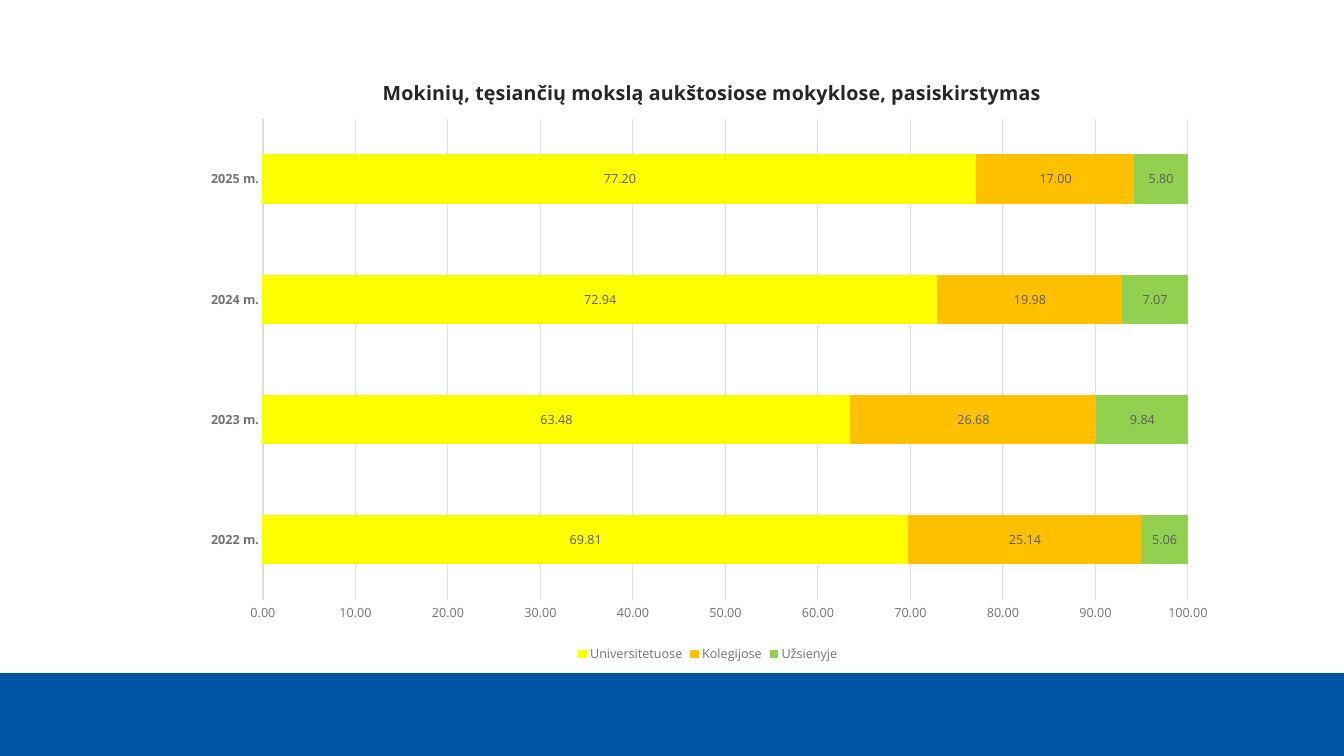
from dataclasses import dataclass

from lxml.etree import SubElement
from pptx import Presentation
from pptx.chart.chart import Chart
from pptx.chart.data import CategoryChartData
from pptx.dml.color import RGBColor
from pptx.enum.chart import (XL_CHART_TYPE, XL_LABEL_POSITION,
                             XL_LEGEND_POSITION, XL_TICK_MARK)
from pptx.enum.shapes import MSO_SHAPE
from pptx.oxml.ns import qn
from pptx.util import Emu, Pt

WIDE, HIGH = 1344, 756
SCALE = 12192000 / WIDE
FACE = "Open Sans"
HUES = {
    "band": "0054A5", "title": "262626", "axis": "727272",
    "label": "5C5C5C", "grid": "DEDEDE",
    "yellow": "FFFF00", "orange": "FFC000", "green": "92D050",
}
TITLE = "Mokinių, tęsiančių mokslą aukštosiose mokyklose, pasiskirstymas"
YEARS = ["2022 m.", "2023 m.", "2024 m.", "2025 m."]


@dataclass
class Box:
    """A rectangle in px."""
    left: int
    top: int
    width: int
    height: int

    def emu(self) -> tuple:
        """Return the four lengths in EMU."""
        return tuple(px(v) for v in (self.left, self.top, self.width, self.height))


@dataclass
class Group:
    """One kind of school and its yearly shares."""
    name: str
    hue: str
    shares: list


BAND = Box(0, 673, WIDE, 83)
FRAME = Box(187, 50, 1042, 617)
PLOT = Box(263, 119, 925, 481)
HEAD = Box(379, 74, 658, 27)
GROUPS = [
    Group("Universitetuose", "yellow", [69.81, 63.48, 72.94, 77.2]),
    Group("Kolegijose", "orange", [25.14, 26.68, 19.98, 17]),
    Group("Užsienyje", "green", [5.06, 9.84, 7.07, 5.8]),
]


def px(size: int) -> Emu:
    """Turn px into EMU."""
    return Emu(round(size * SCALE))


def rgb(hue: str) -> RGBColor:
    """Look up a named colour."""
    return RGBColor.from_string(HUES[hue])


def style(font, size: int, hue: str, bold: bool = False) -> None:
    """Set face, size, colour and weight."""
    font.name, font.size, font.bold = FACE, Pt(size), bold
    font.color.rgb = rgb(hue)


def stroke(line, hue: str) -> None:
    """Draw a thin line in one colour."""
    line.color.rgb = rgb(hue)
    line.width = Pt(0.75)


def place(owner, spot: int, box: Box, inner: bool) -> None:
    """Pin a chart part to a box, as shares of the chart frame."""
    for old in owner.findall(qn("c:layout")):
        owner.remove(old)
    layout = SubElement(owner, qn("c:layout"))
    owner.insert(spot, layout)
    manual = SubElement(layout, qn("c:manualLayout"))
    rules = {"xMode": "edge", "yMode": "edge",
             "x": (box.left - FRAME.left) / FRAME.width,
             "y": (box.top - FRAME.top) / FRAME.height}
    if inner:
        rules = {"layoutTarget": "inner", **rules,
                 "w": box.width / FRAME.width, "h": box.height / FRAME.height}
    for tag, val in rules.items():
        SubElement(manual, qn(f"c:{tag}")).set("val", str(val))


def add_band(slide) -> None:
    """Draw the blue band at the foot."""
    band = slide.shapes.add_shape(MSO_SHAPE.RECTANGLE, *BAND.emu())
    band.shadow.inherit = False
    band.fill.solid()
    band.fill.fore_color.rgb = rgb("band")
    band.line.fill.background()


def set_title(chart: Chart) -> None:
    """Write and place the chart title."""
    chart.has_title = True
    title = chart.chart_title
    title.include_in_layout = False
    line = title.text_frame.paragraphs[0]
    line.text = TITLE
    style(line.font, 14, "title", True)
    place(chart.element.find(f".//{qn('c:title')}"), 1, HEAD, False)


def set_axes(chart: Chart) -> None:
    """Format both axes and the grid."""
    years, shares = chart.category_axis, chart.value_axis
    for axis in (years, shares):
        axis.major_tick_mark = axis.minor_tick_mark = XL_TICK_MARK.NONE
        style(axis.tick_labels.font, 9, "axis", axis is years)
    stroke(years.format.line, "grid")
    shares.format.line.fill.background()
    shares.minimum_scale, shares.maximum_scale = 0, 100
    shares.major_unit = 10
    shares.has_major_gridlines = True
    stroke(shares.major_gridlines.format.line, "grid")
    shares.tick_labels.number_format = "0.00"
    shares.tick_labels.number_format_is_linked = False


def set_bars(chart: Chart) -> None:
    """Colour and label each group of bars."""
    plot = chart.plots[0]
    plot.gap_width, plot.overlap = 150, 100
    plot.vary_by_categories = False
    for group, bars in zip(GROUPS, plot.series):
        bars.format.fill.solid()
        bars.format.fill.fore_color.rgb = rgb(group.hue)
        stroke(bars.format.line, group.hue)
        labels = bars.data_labels
        labels.show_value = True
        labels.number_format = "0.00"
        labels.number_format_is_linked = False
        labels.position = XL_LABEL_POSITION.CENTER
        style(labels.font, 9, "label")


def add_bars(slide) -> None:
    """Add the stacked bar chart."""
    data = CategoryChartData(number_format="0.00")
    data.categories = YEARS
    for group in GROUPS:
        data.add_series(group.name, group.shares)
    chart = slide.shapes.add_chart(
        XL_CHART_TYPE.BAR_STACKED, *FRAME.emu(), data).chart
    style(chart.font, 10, "title")
    set_title(chart)
    set_axes(chart)
    set_bars(chart)
    place(chart.element.find(f".//{qn('c:plotArea')}"), 0, PLOT, True)
    chart.has_legend = True
    chart.legend.position = XL_LEGEND_POSITION.BOTTOM
    chart.legend.include_in_layout = False
    style(chart.legend.font, 9, "axis")


def main() -> None:
    """Build and save the slide."""
    deck = Presentation()
    deck.slide_width, deck.slide_height = px(WIDE), px(HIGH)
    slide = deck.slides.add_slide(deck.slide_layouts[6])
    add_band(slide)
    add_bars(slide)
    deck.save("out.pptx")


if __name__ == "__main__":
    main()
